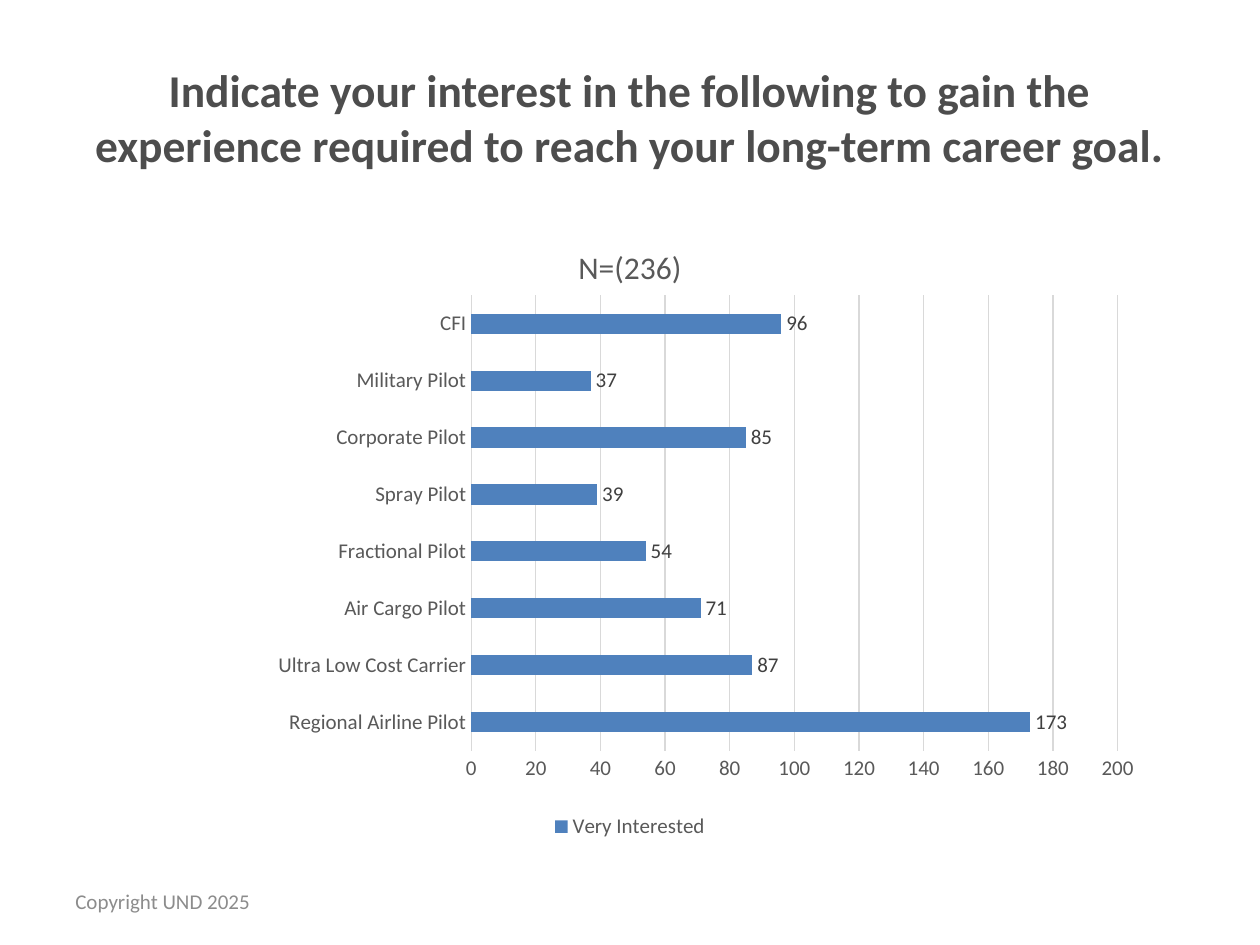
from lxml.etree import SubElement
from pptx import Presentation
from pptx.chart.data import CategoryChartData
from pptx.dml.color import RGBColor
from pptx.enum.chart import XL_CHART_TYPE, XL_LABEL_POSITION, XL_LEGEND_POSITION, XL_TICK_MARK
from pptx.enum.text import MSO_ANCHOR, MSO_AUTO_SIZE, PP_ALIGN
from pptx.oxml.ns import qn
from pptx.util import Pt

EMU_PER_PX = 9144
FONT = "Calibri"
GRID_GREY = "D9D9D9"
TEXT_GREY = "595959"
INTEREST = {
    "Regional Airline Pilot": 173,
    "Ultra Low Cost Carrier": 87,
    "Air Cargo Pilot": 71,
    "Fractional Pilot": 54,
    "Spray Pilot": 39,
    "Corporate Pilot": 85,
    "Military Pilot": 37,
    "CFI": 96,
}
PLOT_LAYOUT = {"x": 0.36, "y": 0.12, "w": 0.57, "h": 0.73}


def px(length):
    return length * EMU_PER_PX


def color(value):
    return RGBColor.from_string(value)


def style_font(font, size, shade, bold=False):
    font.name = FONT
    font.size = Pt(size)
    font.bold = bold
    font.color.rgb = color(shade)


def style_line(line, shade):
    line.color.rgb = color(shade)
    line.width = Pt(0.75)


def fill_text(box, text, size, shade, align, bold=False):
    frame = box.text_frame
    frame.word_wrap = True
    frame.auto_size = MSO_AUTO_SIZE.NONE
    frame.vertical_anchor = MSO_ANCHOR.MIDDLE
    para = frame.paragraphs[0]
    para.alignment = align
    span = para.add_run()
    span.text = text
    style_font(span.font, size, shade, bold)


def add_title(page, text):
    title = page.shapes.title
    title.left, title.top, title.width, title.height = map(px, (50, 30, 900, 125))
    fill_text(title, text, 26, "4D4D4D", PP_ALIGN.CENTER, bold=True)


def add_footer(page, text):
    box = page.shapes.add_textbox(*map(px, (50, 695, 233, 40)))
    fill_text(box, text, 12, "8C8C8C", PP_ALIGN.LEFT)


def set_plot_layout(chart, layout):
    area = chart._chartSpace.chart.plotArea
    for old in area.findall(qn("c:layout")):
        area.remove(old)
    holder = SubElement(area, qn("c:layout"))
    area.insert(0, holder)
    manual = SubElement(holder, qn("c:manualLayout"))
    settings = {"layoutTarget": "inner", "xMode": "edge", "yMode": "edge", **layout}
    for name, value in settings.items():
        SubElement(manual, qn(f"c:{name}")).set("val", str(value))


def style_axes(chart):
    for axis in (chart.category_axis, chart.value_axis):
        axis.major_tick_mark = XL_TICK_MARK.NONE
        axis.minor_tick_mark = XL_TICK_MARK.NONE
        style_font(axis.tick_labels.font, 12, TEXT_GREY)
    style_line(chart.category_axis.format.line, GRID_GREY)
    values = chart.value_axis
    values.minimum_scale, values.maximum_scale, values.major_unit = 0, 200, 20
    values.format.line.fill.background()
    values.has_major_gridlines = True
    style_line(values.major_gridlines.format.line, GRID_GREY)


def style_bars(plot):
    plot.gap_width = 182
    plot.vary_by_categories = False
    series = plot.series[0]
    series.format.fill.solid()
    series.format.fill.fore_color.rgb = color("4F81BD")
    labels = series.data_labels
    labels.show_value = True
    labels.position = XL_LABEL_POSITION.OUTSIDE_END
    style_font(labels.font, 12, "404040")


def add_interest_chart(page):
    data = CategoryChartData()
    data.categories = list(INTEREST)
    data.add_series("Very Interested", list(INTEREST.values()))
    frame = page.shapes.add_chart(
        XL_CHART_TYPE.BAR_CLUSTERED, *map(px, (50, 175, 900, 495)), data
    )
    chart = frame.chart
    style_font(chart.font, 10, "000000")
    chart.has_title = True
    span = chart.chart_title.text_frame.paragraphs[0].add_run()
    span.text = "N=(236)"
    style_font(span.font, 18, TEXT_GREY)
    chart.chart_title.include_in_layout = False
    chart.has_legend = True
    chart.legend.position = XL_LEGEND_POSITION.BOTTOM
    chart.legend.include_in_layout = False
    style_font(chart.legend.font, 12, TEXT_GREY)
    style_axes(chart)
    style_bars(chart.plots[0])
    set_plot_layout(chart, PLOT_LAYOUT)


def main():
    deck = Presentation()
    deck.slide_width, deck.slide_height = px(1000), px(750)
    page = deck.slides.add_slide(deck.slide_layouts[5])
    add_title(
        page,
        "Indicate your interest in the following to gain the experience "
        "required to reach your long-term career goal.",
    )
    add_interest_chart(page)
    add_footer(page, "Copyright UND 2025")
    deck.save("out.pptx")


if __name__ == "__main__":
    main()
